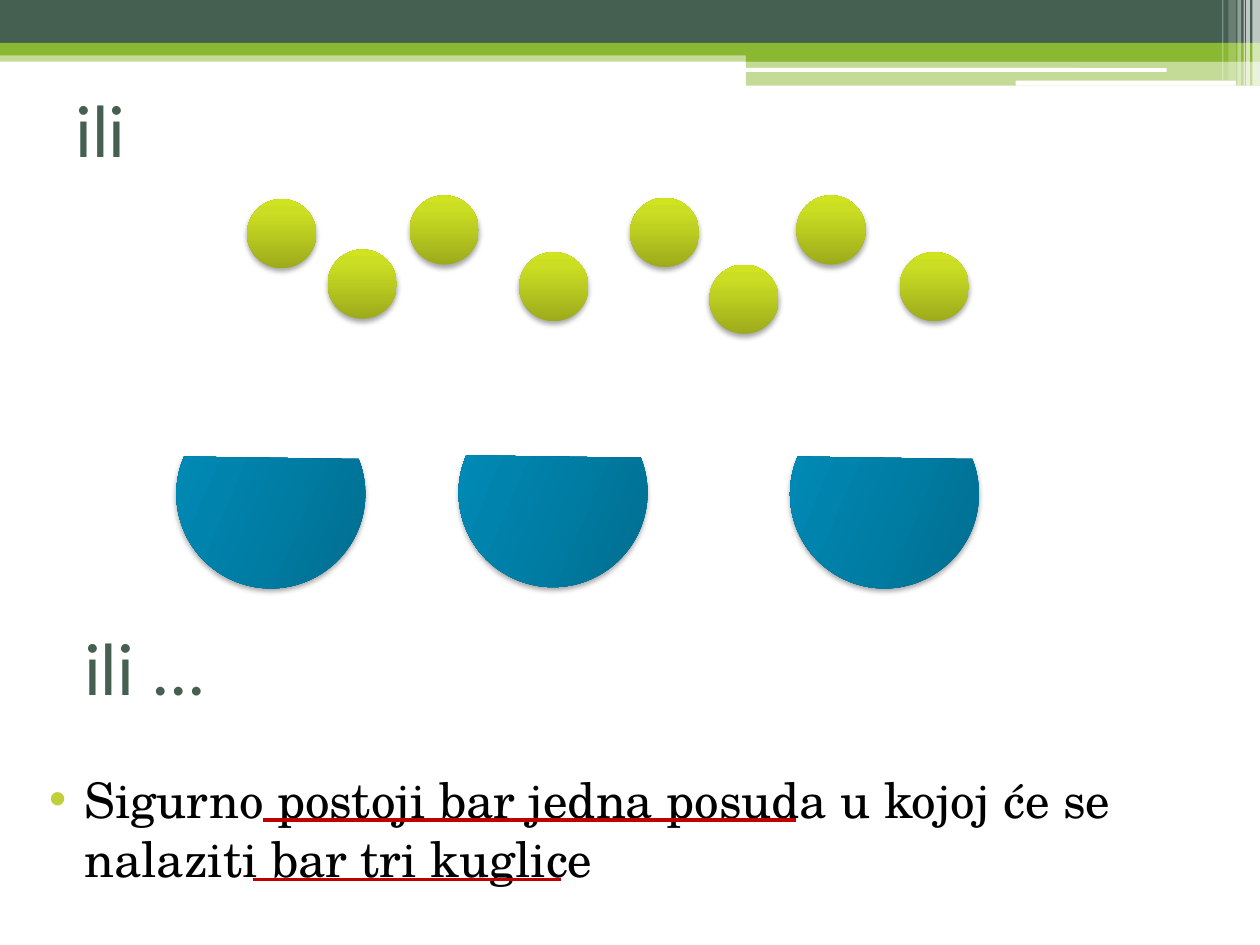
from lxml.etree import SubElement
from pptx import Presentation
from pptx.dml.color import RGBColor
from pptx.enum.shapes import MSO_CONNECTOR as CONNECTOR, MSO_SHAPE as SHAPE
from pptx.enum.text import MSO_ANCHOR as ANCHOR, MSO_AUTO_SIZE as AUTO_SIZE, PP_ALIGN as ALIGN
from pptx.oxml import parse_xml
from pptx.oxml.ns import nsdecls, qn
from pptx.util import Inches, Pt

DARK_GREEN = RGBColor(0x45, 0x5F, 0x51)
GREEN = RGBColor(0x8A, 0xB8, 0x33)
LIME = RGBColor(0xC0, 0xCF, 0x3A)
RED = RGBColor(0xC0, 0x00, 0x00)
BLACK = RGBColor(0x00, 0x00, 0x00)
WHITE = RGBColor(0xFF, 0xFF, 0xFF)
BALL_STOPS = (
    (0, RGBColor(0x9D, 0xAB, 0x1B)),
    (80, RGBColor(0xCB, 0xDE, 0x23)),
    (100, RGBColor(0xCF, 0xE3, 0x1F)),
)
BOWL_STOPS = (
    (0, RGBColor(0x00, 0x6A, 0x8B)),
    (80, RGBColor(0x00, 0x89, 0xB4)),
    (100, RGBColor(0x00, 0x8A, 0xB5)),
)

BANDS = (
    (0, 0.4, 10, 0.09, GREEN, 50),
    (0, 0, 10, 0.34, DARK_GREEN, 100),
    (0, 0.34, 10, 0.1, GREEN, 100),
    (5.92, 0.39, 4.08, 0.1, GREEN, 100),
    (5.92, 0.48, 4.08, 0.2, GREEN, 50),
)
ROUNDED_BARS = ((5.91, 0.54, 3.35, 0.03), (8.06, 0.64, 1.75, 0.04))
STRIPES = (
    (9.94, 0.06, 0.68, 65),
    (9.89, 0.03, 0.68, 65),
    (9.87, 0.01, 0.68, 60),
    (9.82, 0.03, 0.68, 40),
    (9.75, 0.06, 0.64, 20),
    (9.7, 0.01, 0.64, 30),
)
BALL_SIZE = 0.55
BALLS = (
    (1.96, 1.58), (3.25, 1.55), (5, 1.57), (6.32, 1.55),
    (7.14, 2), (2.6, 1.98), (4.12, 2), (5.63, 2.1),
)
BOWL_SIZE = 1.5
BOWL_ROTATION = 293.3
BOWLS = ((1.4, 3.17), (3.64, 3.16), (6.27, 3.17))
UNDERLINES = ((2.09, 6.32, 6.51), (2.01, 4.45, 6.98))
CONCLUSION = "Sigurno postoji bar jedna posuda u kojoj će se nalaziti bar tri kuglice"


def place(part, left, top, width, height):
    """Move and size a part, with lengths in inches."""
    part.left, part.top = Inches(left), Inches(top)
    part.width, part.height = Inches(width), Inches(height)


def add_band(slide, kind, box, color, opacity=100):
    """Add a flat decoration without outline."""
    band = slide.shapes.add_shape(kind, *map(Inches, box))
    band.shadow.inherit = False
    band.fill.solid()
    band.fill.fore_color.rgb = color
    band.line.fill.background()
    if opacity < 100:
        tint = band.fill._xPr.find(qn("a:solidFill"))[0]
        SubElement(tint, qn("a:alpha"), val=str(opacity * 1000))


def add_header(slide):
    """Add the bands, bars and stripes along the top edge."""
    for *box, color, opacity in BANDS:
        add_band(slide, SHAPE.RECTANGLE, box, color, opacity)
    for box in ROUNDED_BARS:
        add_band(slide, SHAPE.ROUNDED_RECTANGLE, box, WHITE)
    for left, width, height, opacity in STRIPES:
        add_band(slide, SHAPE.RECTANGLE, (left, 0, width, height), WHITE, opacity)


def add_glossy(slide, kind, left, top, size, stops, rotation=0):
    """Add a shaded shape with a soft shadow below it."""
    glossy = slide.shapes.add_shape(kind, Inches(left), Inches(top), Inches(size), Inches(size))
    glossy.rotation = rotation
    stop_xml = "".join(
        f'<a:gs pos="{position * 1000}"><a:srgbClr val="{color}"/></a:gs>'
        for position, color in stops
    )
    properties = glossy._element.spPr
    properties.append(parse_xml(
        f'<a:gradFill {nsdecls("a")} rotWithShape="1"><a:gsLst>{stop_xml}</a:gsLst>'
        '<a:lin ang="16200000" scaled="0"/></a:gradFill>'
    ))
    glossy.line.fill.background()
    properties.append(parse_xml(
        f'<a:effectLst {nsdecls("a")}><a:outerShdw blurRad="{Pt(3.1)}" dist="{Pt(1.8)}" '
        'dir="5400000" rotWithShape="0"><a:srgbClr val="000000"><a:alpha val="35000"/>'
        '</a:srgbClr></a:outerShdw></a:effectLst>'
    ))


def write(part, text, font_name, size, color, anchor):
    """Write one left-aligned paragraph and return it."""
    frame = part.text_frame
    frame.word_wrap = True
    frame.auto_size = AUTO_SIZE.NONE
    frame.vertical_anchor = anchor
    frame.text = text
    paragraph = frame.paragraphs[0]
    paragraph.alignment = ALIGN.LEFT
    paragraph.font.name = font_name
    paragraph.font.size = Pt(size)
    paragraph.font.color.rgb = color
    return paragraph


def write_heading(part, text, left, top):
    """Place a heading and write its text."""
    place(part, left, top, 9, 1.17)
    write(part, text, "Lato", 40, DARK_GREEN, ANCHOR.MIDDLE)


def write_conclusion(body):
    """Write the bulleted conclusion at the foot of the body."""
    place(body, 0.17, 1.94, 9, 5.35)
    body.text_frame.margin_bottom = Inches(0.25)
    paragraph = write(body, CONCLUSION, "TeX Gyre Schola", 28, BLACK, ANCHOR.BOTTOM)
    paragraph.space_before = Pt(3)
    properties = paragraph._p.get_or_add_pPr()
    properties.set("marL", str(Inches(0.4)))
    properties.set("indent", str(Inches(-0.28)))
    bullet_color = parse_xml(
        f'<a:buClr {nsdecls("a")}><a:srgbClr val="{LIME}"/></a:buClr>'
    )
    bullet_font = parse_xml(f'<a:buFont {nsdecls("a")} typeface="Arial"/>')
    bullet = parse_xml(f'<a:buChar {nsdecls("a")} char="•"/>')
    defaults = properties.find(qn("a:defRPr"))
    for element in (bullet_color, bullet_font, bullet):
        defaults.addprevious(element)


def add_underline(slide, start, end, top):
    """Add a red line under a key phrase."""
    underline = slide.shapes.add_connector(
        CONNECTOR.STRAIGHT, Inches(start), Inches(top), Inches(end), Inches(top)
    )
    underline.line.color.rgb = RED
    underline.line.width = Pt(2.25)
    SubElement(underline._element.spPr, qn("a:effectLst"))


def main():
    """Build the slide and save it."""
    deck = Presentation()
    deck.slide_width, deck.slide_height = Inches(10), Inches(7.5)
    slide = deck.slides.add_slide(deck.slide_layouts[1])
    add_header(slide)
    write_heading(slide.shapes.title, "ili", 0.5, 0.44)
    write_conclusion(slide.placeholders[1])
    for left, top in BOWLS:
        add_glossy(slide, SHAPE.CHORD, left, top, BOWL_SIZE, BOWL_STOPS, BOWL_ROTATION)
    for left, top in BALLS:
        add_glossy(slide, SHAPE.OVAL, left, top, BALL_SIZE, BALL_STOPS)
    for start, end, top in UNDERLINES:
        add_underline(slide, start, end, top)
    closing = slide.shapes.add_textbox(0, 0, 0, 0)
    write_heading(closing, "ili …", 0.57, 4.71)
    deck.save("out.pptx")


if __name__ == "__main__":
    main()
